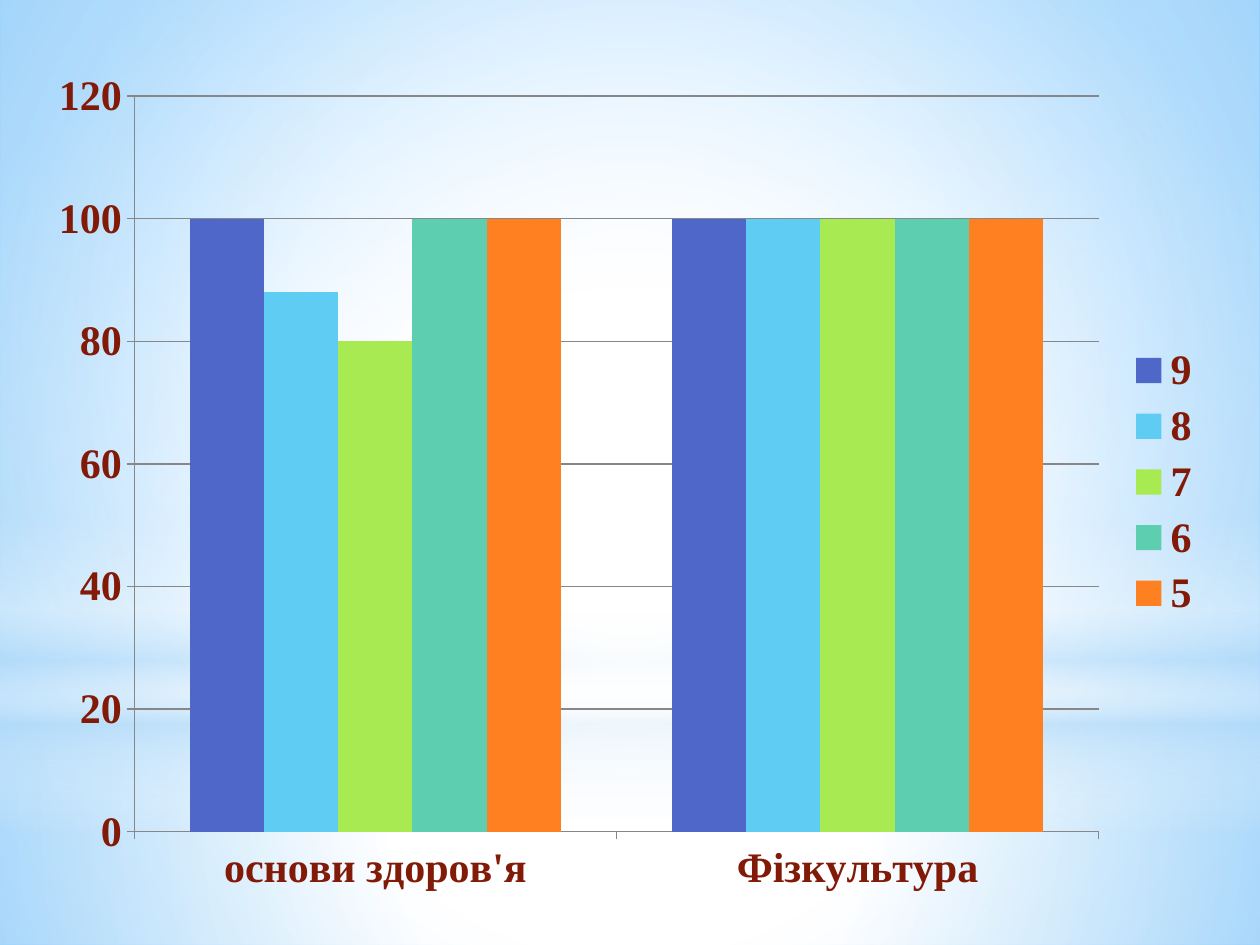
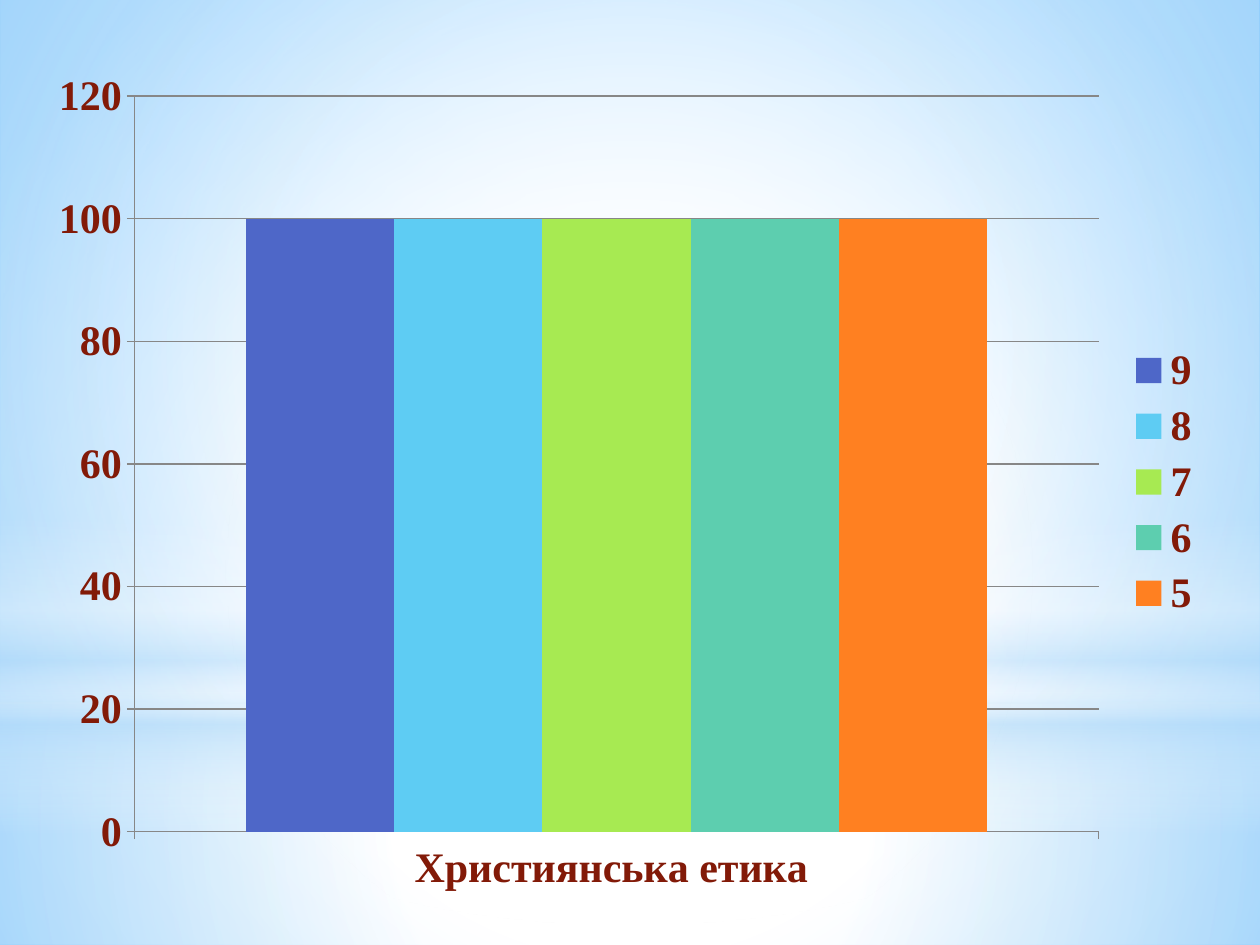
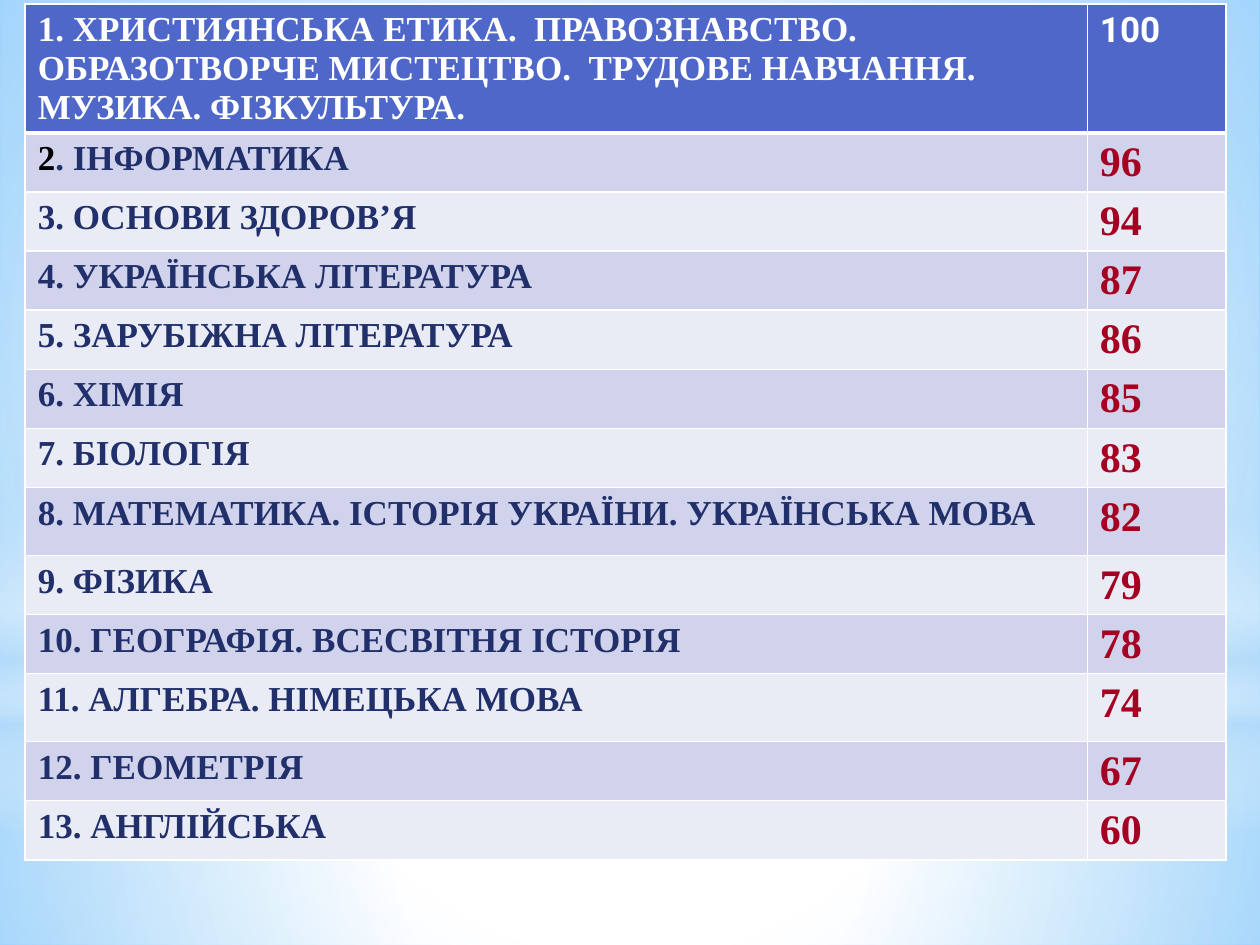
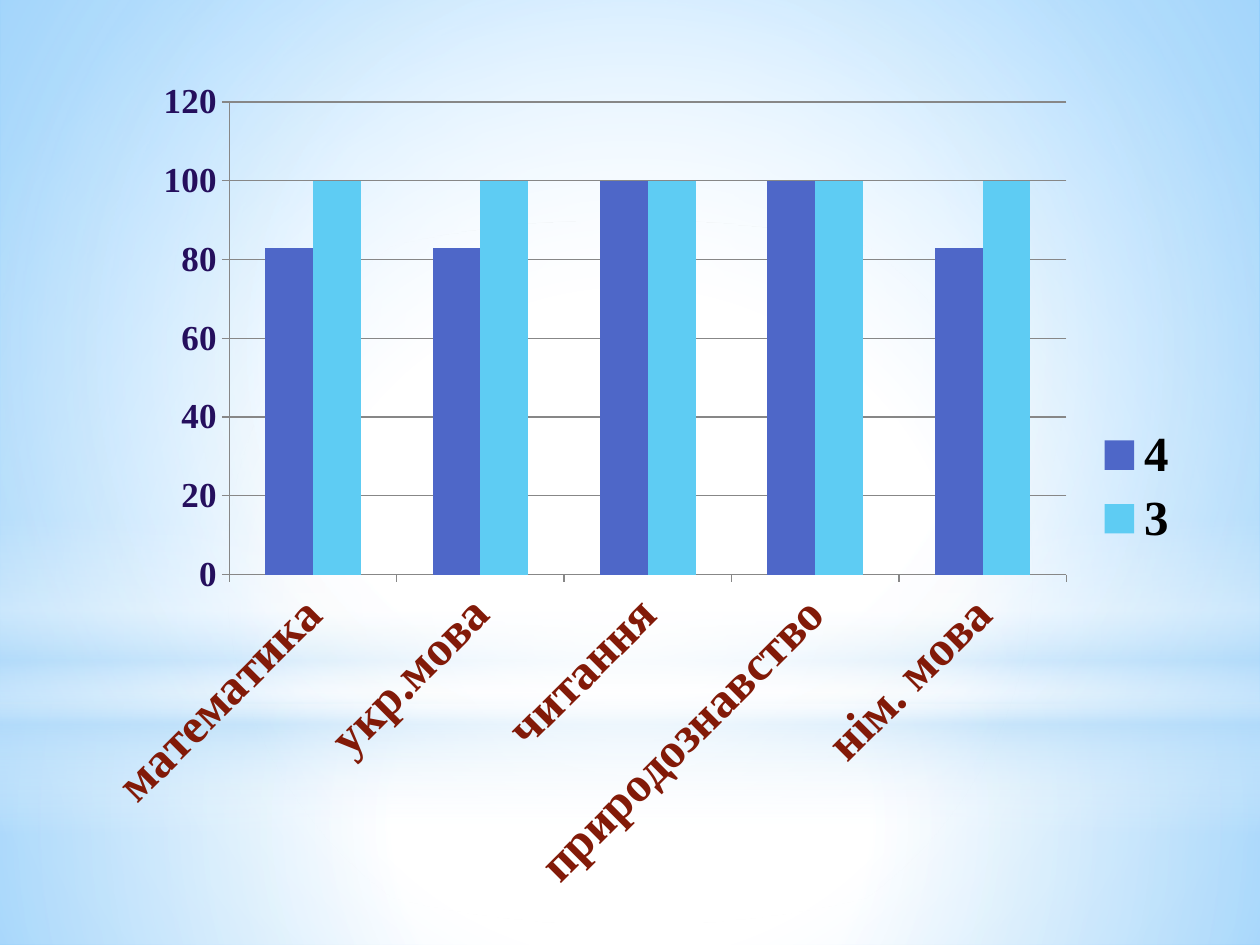
from lxml.etree import SubElement
from pptx import Presentation
from pptx.chart.data import CategoryChartData
from pptx.dml.color import RGBColor
from pptx.enum.chart import XL_CHART_TYPE as ChartType, XL_LEGEND_POSITION as LegendPosition
from pptx.enum.chart import XL_TICK_MARK as TickMark
from pptx.enum.shapes import MSO_SHAPE as Preset
from pptx.oxml import parse_xml
from pptx.oxml.ns import nsdecls, qn
from pptx.util import Inches, Pt

COLORS = {
    "white": "FFFFFF", "black": "000000", "sky": "63BCFF", "mist": "B4DCFA",
    "brown": "821A08", "violet": "250F5D", "navy": "21306A", "crimson": "A50021",
    "blue": "4E67C8", "cyan": "5ECCF3", "lime": "A7EA52", "teal": "5DCEAF",
    "orange": "FF8021", "band_dark": "D0D3EB", "band_light": "E9EBF5", "axis": "878787",
}
SERIES_COLORS = ["blue", "cyan", "lime", "teal", "orange"]
SERIF, SANS = "Times New Roman", "Roboto"
CENTER = (50, 50, 50, 50)
BACKGROUND = [(0, "white", 100), (42, "white", 100), (100, "sky", 100)]
BACKDROP = [
    (Preset.RECTANGLE, 5.58, 1.92, [(0, "white", 91), (37, "white", 76), (100, "mist", 79)], CENTER),
    (Preset.RECTANGLE, 0, 5.58, [(0, "white", 89), (48, "white", 62), (100, "mist", 79)], CENTER),
    (Preset.RECTANGLE, 4.12, 2.5, [(0, "white", 0), (29, "white", 30), (45, "mist", 40),
                                   (55, "white", 26), (65, "mist", 60), (100, "white", 0)], None),
    (Preset.OVAL, 1.75, 5.58, [(0, "white", 100), (56, "white", 0)], CENTER),
]
GRADE_BOX = (0.28, 0.44, 9.37, 6.77)
PRIMARY_BOX = (0.67, 0.52, 8.82, 6.69)
RANKING_BOX = (0.2, 0.03, 9.53, 7.18)
RANKING = [
    ("1. ХРИСТИЯНСЬКА ЕТИКА.  ПРАВОЗНАВСТВО. ОБРАЗОТВОРЧЕ МИСТЕЦТВО.  ТРУДОВЕ НАВЧАННЯ. "
     "МУЗИКА. ФІЗКУЛЬТУРА.", 100, 0.94),
    ("2. ІНФОРМАТИКА", 96, 0.4),
    ("3. ОСНОВИ ЗДОРОВ’Я", 94, 0.37),
    ("4. УКРАЇНСЬКА ЛІТЕРАТУРА", 87, 0.42),
    ("5. ЗАРУБІЖНА ЛІТЕРАТУРА", 86, 0.44),
    ("6. ХІМІЯ", 85, 0.44),
    ("7. БІОЛОГІЯ", 83, 0.44),
    ("8. МАТЕМАТИКА. ІСТОРІЯ УКРАЇНИ. УКРАЇНСЬКА МОВА", 82, 0.54),
    ("9. ФІЗИКА", 79, 0.44),
    ("10. ГЕОГРАФІЯ. ВСЕСВІТНЯ ІСТОРІЯ", 78, 0.45),
    ("11. АЛГЕБРА. НІМЕЦЬКА МОВА", 74, 0.54),
    ("12. ГЕОМЕТРІЯ", 67, 0.43),
    ("13. АНГЛІЙСЬКА", 60, 0.41),
]


def rgb(name):
    """Return the named palette colour."""
    return RGBColor.from_string(COLORS[name])


def style_font(font, size, color, bold=True, name=SERIF):
    """Apply the face, size, weight and colour of a font."""
    font.name, font.size, font.bold = name, Pt(size), bold
    font.color.rgb = rgb(color)


def set_gradient(fill, element, stops, focus):
    """Fill an element with a radial gradient, or a vertical one without focus."""
    fill.solid()
    gradient = parse_xml(f'<a:gradFill rotWithShape="1" {nsdecls("a")}/>')
    stop_list = SubElement(gradient, qn("a:gsLst"))
    for position, color, opacity in stops:
        stop = SubElement(stop_list, qn("a:gs"), pos=str(position * 1000))
        shade = SubElement(stop, qn("a:srgbClr"), val=COLORS[color])
        if opacity < 100:
            SubElement(shade, qn("a:alpha"), val=str(opacity * 1000))
    if focus:
        radial = SubElement(gradient, qn("a:path"))
        radial.set("path", "circle")
        sides = {side: str(share * 1000) for side, share in zip("ltrb", focus)}
        SubElement(radial, qn("a:fillToRect"), **sides)
    else:
        SubElement(gradient, qn("a:lin"), ang="5400000", scaled="0")
    solid = element.xpath(".//a:solidFill")[0]
    solid.getparent().replace(solid, gradient)


def build_backdrop(layout, slide, width):
    """Give the layout its sky background and glowing bands, drawn by way of a slide."""
    for placeholder in list(layout.placeholders):
        layout.shapes.element.remove(placeholder.element)
    set_gradient(layout.background.fill, layout.element, BACKGROUND, (24, 44, 24, 12))
    for preset, top, height, stops, focus in BACKDROP:
        shape = slide.shapes.add_shape(preset, 0, Inches(top), width, Inches(height))
        shape.shadow.inherit = False
        set_gradient(shape.fill, shape.element, stops, focus)
        shape.line.fill.background()
        layout.shapes.element.append(shape.element)


def add_column_chart(slide, box, categories, series):
    """Place a clustered column chart of percentages in the box."""
    data = CategoryChartData()
    data.categories = categories
    for name, values in series.items():
        data.add_series(name, values)
    frame = slide.shapes.add_chart(ChartType.COLUMN_CLUSTERED, *map(Inches, box), data)
    chart = frame.chart
    chart.has_title = False
    style_font(chart.font, 24, "brown")
    plot = chart.plots[0]
    plot.gap_width, plot.vary_by_categories = 150, False
    for column, color in zip(plot.series, SERIES_COLORS):
        column.format.fill.solid()
        column.format.fill.fore_color.rgb = rgb(color)
    value_axis = chart.value_axis
    value_axis.minimum_scale, value_axis.maximum_scale, value_axis.major_unit = 0, 120, 20
    value_axis.has_major_gridlines = True
    for axis in (chart.category_axis, value_axis):
        axis.major_tick_mark = TickMark.OUTSIDE
        axis.format.line.color.rgb = rgb("axis")
    value_axis.major_gridlines.format.line.color.rgb = rgb("axis")
    chart.has_legend = True
    chart.legend.position = LegendPosition.RIGHT
    chart.legend.include_in_layout = False
    return chart


def add_primary_chart(slide, box, categories, series):
    """Place the primary school chart with slanted subject names."""
    chart = add_column_chart(slide, box, categories, series)
    style_font(chart.value_axis.tick_labels.font, 20, "violet")
    style_font(chart.category_axis.tick_labels.font, 28, "brown")
    style_font(chart.legend.font, 28, "black")
    body = chart.category_axis.format.line and chart.category_axis.tick_labels
    text_body = chart.element.xpath(".//c:catAx/c:txPr/a:bodyPr")[0] if body else None
    text_body.set("rot", "-2700000")


def set_borders(cell, top, bottom):
    """Draw white borders around a cell with the given top and bottom widths."""
    properties = cell.fill and cell._tc.get_or_add_tcPr()
    for index, (side, width) in enumerate(zip("LRTB", (1, 1, top, bottom))):
        properties.insert(index, parse_xml(
            f'<a:ln{side} w="{Pt(width)}" {nsdecls("a")}><a:solidFill>'
            f'<a:srgbClr val="{COLORS["white"]}"/></a:solidFill></a:ln{side}>'))


def fill_cell(cell, text, fill, size, color, font_name=SERIF):
    """Write styled text into a filled cell."""
    cell.text_frame.text = text
    for run in cell.text_frame.paragraphs[0].runs:
        style_font(run.font, size, color, name=font_name)
    cell.fill.solid()
    cell.fill.fore_color.rgb = rgb(fill)


def add_ranking_table(slide, box):
    """Place the table of subjects ranked by result in the box."""
    table = slide.shapes.add_table(len(RANKING), 2, *map(Inches, box)).table
    score_width = 1.1
    table.columns[0].width = Inches(box[2] - score_width)
    table.columns[1].width = Inches(score_width)
    table.horz_banding = False
    for index, (subject, score, height) in enumerate(RANKING):
        table.rows[index].height = Inches(height)
        subject_cell, score_cell = table.cell(index, 0), table.cell(index, 1)
        if index == 0:
            fill_cell(subject_cell, subject, "blue", 20, "white")
            fill_cell(score_cell, str(score), "blue", 20, "white", SANS)
        else:
            fill = "band_dark" if index % 2 else "band_light"
            fill_cell(subject_cell, subject, fill, 20, "navy")
            fill_cell(score_cell, str(score), fill, 24, "crimson")
        for cell in (subject_cell, score_cell):
            set_borders(cell, 3 if index == 1 else 1, 3 if index == 0 else 1)
    paragraph = table.cell(1, 0).text_frame.paragraphs[0]
    number = paragraph.runs[0]
    rest = paragraph.add_run()
    number.text, rest.text = number.text[:1], number.text[1:]
    style_font(number.font, 20, "black")
    style_font(rest.font, 20, "navy")


def main():
    """Build the four slides and save them."""
    presentation = Presentation()
    presentation.slide_width, presentation.slide_height = Inches(10), Inches(7.5)
    layout = presentation.slide_layouts[6]
    health, ethics, ranking, primary = [presentation.slides.add_slide(layout) for _ in range(4)]
    build_backdrop(layout, health, presentation.slide_width)
    add_column_chart(health, GRADE_BOX, ["основи здоров'я", "Фізкультура"], {
        "9": [100, 100], "8": [88, 100], "7": [80, 100], "6": [100, 100], "5": [100, 100]})
    add_column_chart(ethics, GRADE_BOX, ["Християнська етика "],
                     {grade: [100] for grade in "98765"})
    add_ranking_table(ranking, RANKING_BOX)
    add_primary_chart(
        primary, PRIMARY_BOX,
        ["математика", "укр.мова", "читання", "природознавство", "нім. мова"],
        {"4": [83, 83, 100, 100, 83], "3": [100] * 5})
    presentation.save("out.pptx")


if __name__ == "__main__":
    main()
